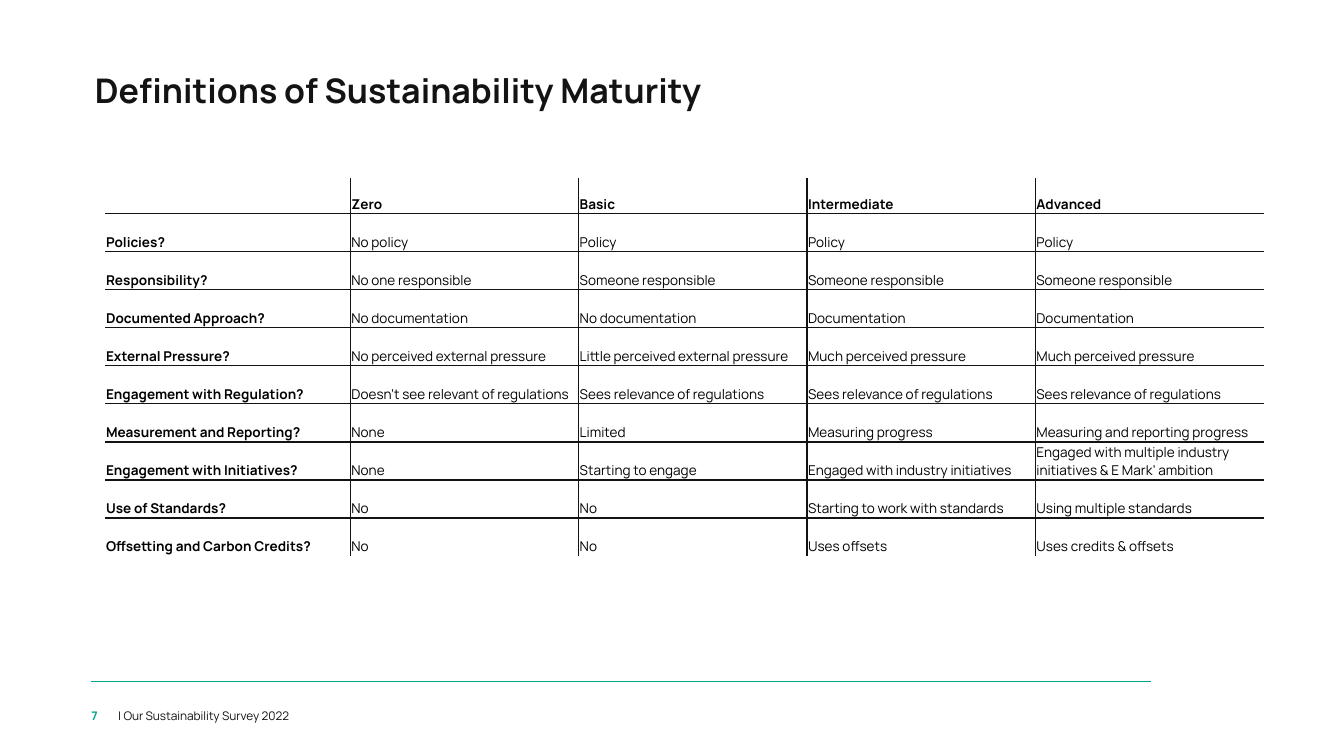
from dataclasses import dataclass

from lxml import etree
from pptx import Presentation
from pptx import util as u
from pptx.dml import color
from pptx.enum import shapes, text
from pptx.oxml import ns


@dataclass(frozen=True)
class Theme:
    font: str = "Manrope"
    ink: str = "131313"
    black: str = "000000"
    accent: str = "00A68B"
    title_size: float = 20
    table_size: float = 8
    footer_size: float = 7


LEVELS = ["", "Zero", "Basic", "Intermediate", "Advanced"]
CRITERIA = [
    ["Policies?", "No policy", "Policy", "Policy", "Policy"],
    ["Responsibility?", "No one responsible"] + ["Someone responsible"] * 3,
    ["Documented Approach?", "No documentation", "No documentation",
     "Documentation", "Documentation"],
    ["External Pressure?", "No perceived external pressure",
     "Little perceived external pressure", "Much perceived pressure",
     "Much perceived pressure"],
    ["Engagement with Regulation?", "Doesn’t see relevant of regulations"]
    + ["Sees relevance of regulations"] * 3,
    ["Measurement and Reporting?", "None", "Limited", "Measuring progress",
     "Measuring and reporting progress"],
    ["Engagement with Initiatives?", "None", "Starting to engage",
     "Engaged with industry initiatives",
     "Engaged with multiple industry initiatives & E Mark’ ambition"],
    ["Use of Standards?", "No", "No", "Starting to work with standards",
     "Using multiple standards"],
    ["Offsetting and Carbon Credits?", "No", "No", "Uses offsets",
     "Uses credits & offsets"],
]


class SlideBuilder:
    def __init__(self, page, theme):
        self.page = page
        self.theme = theme

    def style(self, para, size, tint, bold=False):
        font = para.font
        font.name = self.theme.font
        font.size = u.Pt(size)
        font.bold = bold
        font.color.rgb = color.RGBColor.from_string(tint)

    def label(self, words, left, top, width, height, size, tint, bold=False):
        box = self.page.shapes.add_textbox(*map(u.Pt, (left, top, width, height)))
        frame = box.text_frame
        frame.word_wrap = True
        frame.margin_left = frame.margin_right = 0
        frame.margin_top = frame.margin_bottom = 0
        para = frame.paragraphs[0]
        para.text = words
        para.line_spacing = 1.1
        para.space_after = u.Pt(3)
        self.style(para, size, tint, bold)

    def rule(self, left, right, top, weight):
        line = self.page.shapes.add_connector(
            shapes.MSO_CONNECTOR.STRAIGHT, *map(u.Pt, (left, top, right, top)))
        line.line.color.rgb = color.RGBColor.from_string(self.theme.accent)
        line.line.width = u.Pt(weight)
        etree.SubElement(line._element.spPr, ns.qn("a:effectLst"))

    def border(self, cell, side, visible):
        edge = etree.SubElement(cell._tc.get_or_add_tcPr(), ns.qn(f"a:ln{side}"),
                                w=str(u.Pt(1)))
        if visible:
            fill = etree.SubElement(edge, ns.qn("a:solidFill"))
            etree.SubElement(fill, ns.qn("a:srgbClr"), val=self.theme.ink)
        else:
            etree.SubElement(edge, ns.qn("a:noFill"))

    def cell(self, cell, words, bold, inner_sides):
        cell.margin_left = cell.margin_right = cell.margin_top = u.Pt(0.6)
        cell.margin_bottom = 0
        cell.vertical_anchor = text.MSO_ANCHOR.BOTTOM
        para = cell.text_frame.paragraphs[0]
        para.text = words
        self.style(para, self.theme.table_size, self.theme.black, bold)
        if not words:
            etree.SubElement(para._p, ns.qn("a:endParaRPr"),
                             sz=str(int(self.theme.table_size * 100)))
        for side, visible in inner_sides.items():
            self.border(cell, side, visible)
        cell.fill.background()

    def table(self, rows, left, top, widths, heights):
        table = self.page.shapes.add_table(
            len(rows), len(widths),
            *map(u.Pt, (left, top, sum(widths), sum(heights)))).table
        table.first_row = table.horz_banding = False
        for column, width in zip(table.columns, widths):
            column.width = u.Pt(width)
        last_row, last_column = len(rows) - 1, len(widths) - 1
        for r, (row, height) in enumerate(zip(rows, heights)):
            table.rows[r].height = u.Pt(height)
            for c, words in enumerate(row):
                inner_sides = {"L": c > 0, "R": c < last_column,
                               "T": r > 0, "B": r < last_row}
                self.cell(table.cell(r, c), words, r == 0 or c == 0, inner_sides)


def main():
    deck = Presentation()
    deck.slide_width, deck.slide_height = u.Pt(793.44), u.Pt(446.4)
    theme = Theme()
    builder = SlideBuilder(deck.slides.add_slide(deck.slide_layouts[6]), theme)

    builder.rule(54, 679.5, 402.3, 0.75)
    builder.label("| Our Sustainability Survey 2022", 69.8, 417.6, 251, 9.4,
                  theme.footer_size, theme.ink)
    builder.label("7", 54, 417.6, 15.8, 9, theme.footer_size, theme.accent, True)
    builder.label("Definitions of Sustainability Maturity", 56, 38.9, 661, 23,
                  theme.title_size, theme.ink, True)
    builder.table([LEVELS] + CRITERIA, 62, 105.1, [144.9] + [134.8] * 4,
                  [20.9] + [22.5] * len(CRITERIA))
    deck.save("out.pptx")


if __name__ == "__main__":
    main()
